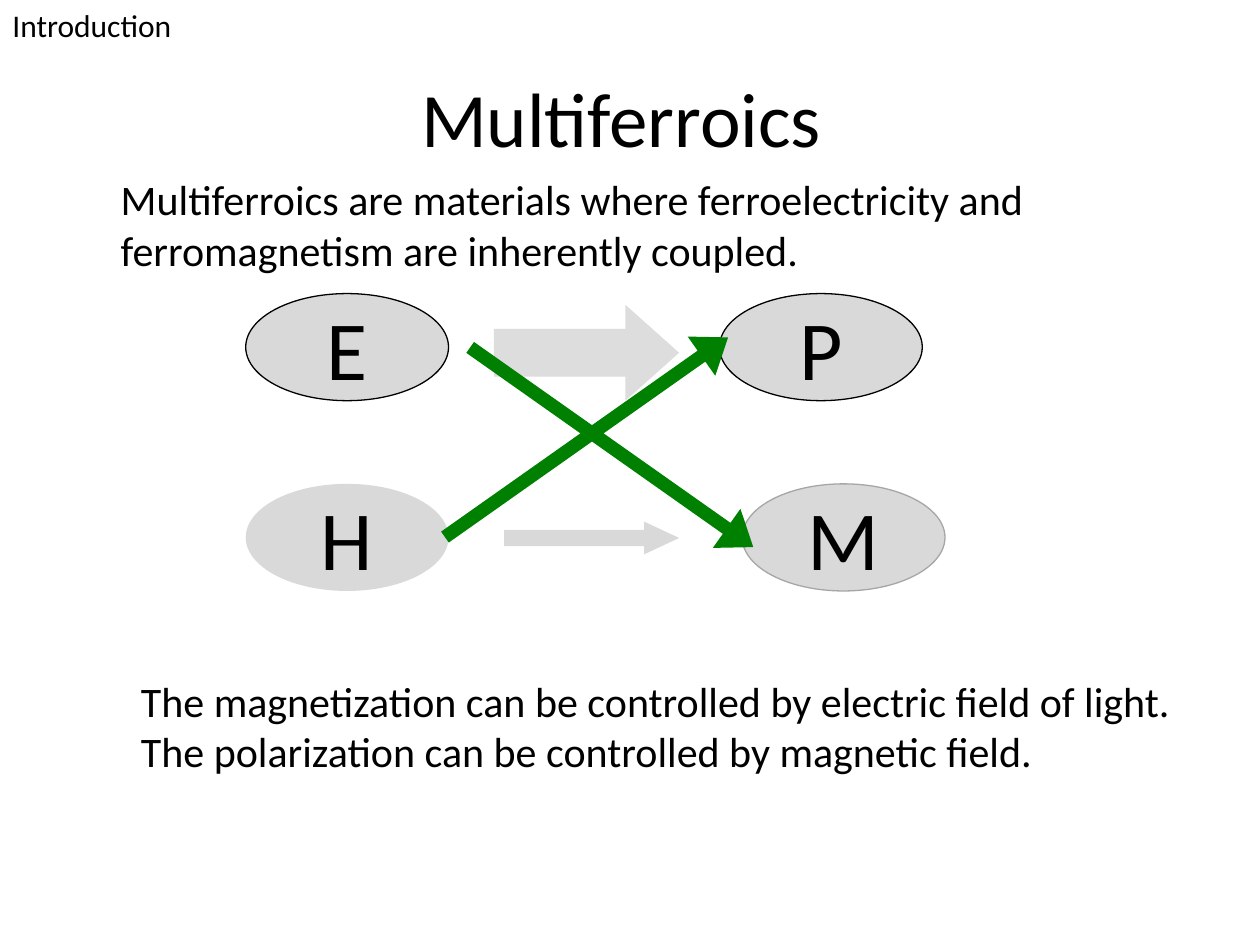
from pptx import Presentation
from pptx.dml.color import RGBColor
from pptx.enum.shapes import MSO_SHAPE as SHAPE
from pptx.enum.text import MSO_ANCHOR as ANCHOR, PP_ALIGN as ALIGN
from pptx.util import Inches, Pt

COLORS = {
    "text": "000000",
    "oval": "D9D9D9",
    "pale_arrow": "DDDDDD",
    "cross_arrow": "008000",
    "soft_outline": "A6A6A6",
}
OVAL_SIZE = (1.61, 0.85)
CROSS_SIZE = (2.75, 0.38)
CROSS_ANGLE = 35.2


def color(name):
    return RGBColor.from_string(COLORS[name])


def write(frame, text, size=24, align=ALIGN.LEFT, anchor=ANCHOR.TOP, wrap=False):
    frame.word_wrap = wrap
    frame.vertical_anchor = anchor
    for index, line in enumerate(text.split("\n")):
        paragraph = frame.add_paragraph() if index else frame.paragraphs[0]
        paragraph.alignment = align
        run = paragraph.add_run()
        run.text = line
        run.font.name = "Calibri"
        run.font.size = Pt(size)
        run.font.color.rgb = color("text")


def add_text(slide, box, text, **style):
    label = slide.shapes.add_textbox(*map(Inches, box))
    write(label.text_frame, text, **style)


def add_filled(slide, kind, box, fill, outline=None):
    figure = slide.shapes.add_shape(kind, *map(Inches, box))
    figure.shadow.inherit = False
    figure.fill.solid()
    figure.fill.fore_color.rgb = color(fill)
    if outline:
        figure.line.color.rgb = color(outline)
        figure.line.width = Pt(0.75)
    else:
        figure.line.fill.background()
    return figure


def add_oval(slide, left, top, symbol, outline):
    oval = add_filled(slide, SHAPE.OVAL, (left, top, *OVAL_SIZE), "oval", outline)
    write(oval.text_frame, symbol, size=48, align=ALIGN.CENTER, anchor=ANCHOR.MIDDLE)


def add_arrow(slide, box, fill, shaft, head, angle=0):
    arrow = add_filled(slide, SHAPE.RIGHT_ARROW, box, fill)
    arrow.adjustments[0] = shaft
    arrow.adjustments[1] = head
    arrow.rotation = angle


def main():
    deck = Presentation()
    deck.slide_width, deck.slide_height = Inches(10), Inches(7.5)
    slide = deck.slides.add_slide(deck.slide_layouts[6])

    add_text(slide, (0.5, 0.3, 9, 1.25), "Multiferroics ", size=44,
             align=ALIGN.CENTER, anchor=ANCHOR.MIDDLE, wrap=True)

    field_left, electric_top, magnetic_top = 1.95, 2.33, 3.84
    for left, top, symbol, outline in [
        (field_left, electric_top, "E", "text"),
        (field_left, magnetic_top, "H", None),
        (5.71, electric_top, "P", "text"),
        (5.89, magnetic_top, "M", "soft_outline"),
    ]:
        add_oval(slide, left, top, symbol, outline)

    add_arrow(slide, (4, 4.14, 1.39, 0.26), "oval", 0.5, 1.07)
    add_arrow(slide, (3.92, 2.42, 1.47, 0.76), "pale_arrow", 0.5, 0.56)
    for left, top, angle in [(3.28, 3.28, 360 - CROSS_ANGLE), (3.48, 3.36, CROSS_ANGLE)]:
        add_arrow(slide, (left, top, *CROSS_SIZE), "cross_arrow", 0.28, 0.68, angle)

    add_text(slide, (0.86, 1.33, 7.51, 0.91),
             "Multiferroics are materials where ferroelectricity and\n"
             "ferromagnetism are inherently coupled.")
    add_text(slide, (1.02, 5.31, 8.67, 1.72),
             "The magnetization can be controlled by electric field of light.\n"
             "The polarization can be controlled by magnetic field.", wrap=True)
    add_text(slide, (0, 0, 1.48, 0.4), "Introduction", size=18)

    deck.save("out.pptx")


if __name__ == "__main__":
    main()
